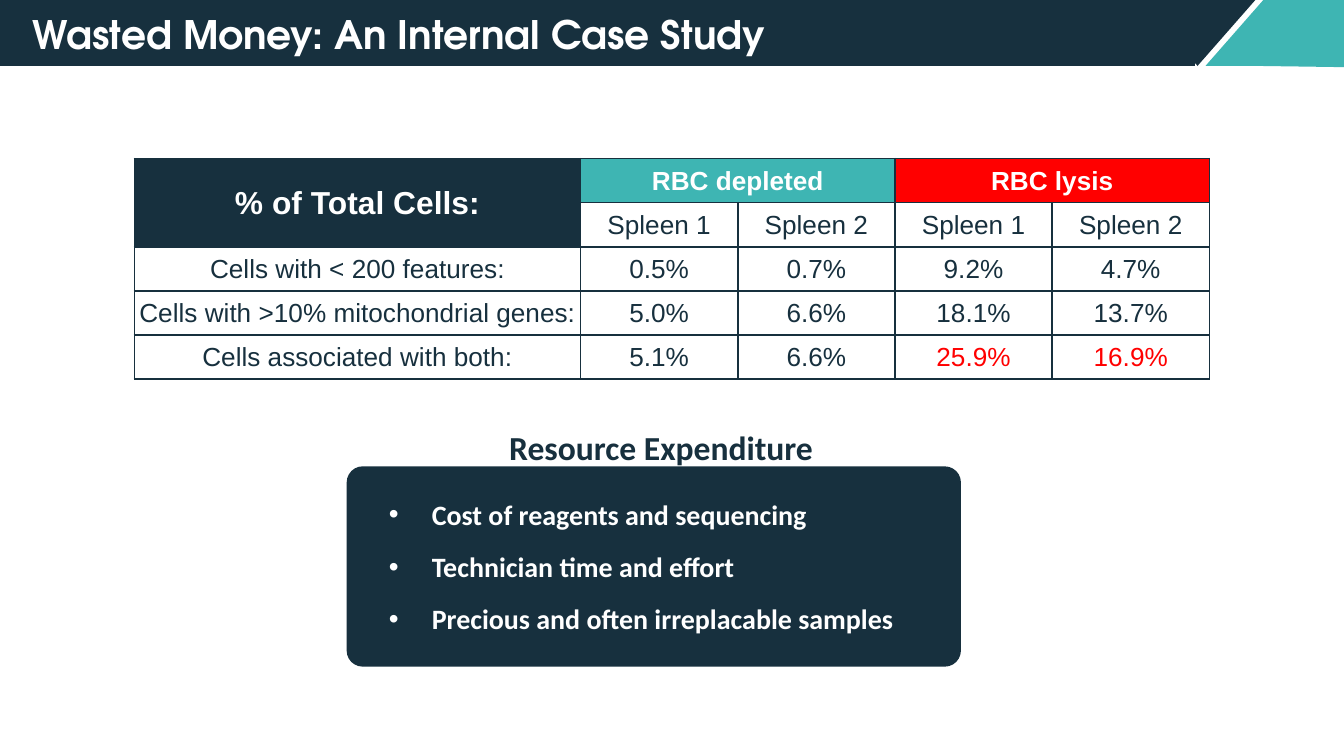
"""Build the slide on wasted money: a cell quality table above a resource list."""
import dataclasses
import typing

import lxml.etree
import pptx
import pptx.dml.color
import pptx.enum.shapes
import pptx.enum.text
import pptx.oxml.ns
import pptx.util

Inches = pptx.util.Inches
Preset = pptx.enum.shapes.MSO_SHAPE
Align = pptx.enum.text.PP_ALIGN
Anchor = pptx.enum.text.MSO_ANCHOR


@dataclasses.dataclass(frozen=True)
class Theme:
    navy: str = "17303E"
    teal: str = "3EB5B3"
    red: str = "FF0000"
    white: str = "FFFFFF"
    title_font: str = "TeX Gyre Adventor"
    table_font: str = "Arial"
    body_font: str = "Calibri"
    title_size: float = 21
    heading_size: float = 18
    corner_size: float = 17
    bullet_size: float = 15
    table_size: float = 14
    bullet_gap: float = 10
    border_width: float = 1


THEME = Theme()


class Box(typing.NamedTuple):
    left: float
    top: float
    width: float
    height: float

    def lengths(self) -> list:
        return [Inches(value) for value in self]


class Style(typing.NamedTuple):
    font: str
    size: float
    color: str
    bold: bool = True


class Banner(typing.NamedTuple):
    preset: typing.Any
    box: Box
    color: str
    rotation: float = 0


class Header(typing.NamedTuple):
    text: str
    first: tuple
    last: tuple
    color: str
    size: float


SLIDE_WIDTH = 10
SLIDE_HEIGHT = SLIDE_WIDTH * 9 / 16
BANNERS = (
    Banner(Preset.RECTANGLE, Box(0, 0, 8.89, 0.49), THEME.navy),
    Banner(Preset.ISOSCELES_TRIANGLE, Box(8.97, 0, 0.86, 0.49), THEME.teal),
    Banner(Preset.ISOSCELES_TRIANGLE, Box(8.48, 0, 0.86, 0.49), THEME.navy, 180),
)
CORNER = ((9.28, 0.49), (9.4, 0), (10, 0), (10, 0.5))
HEADERS = (
    Header("% of Total Cells:", (0, 0), (1, 0), THEME.navy, THEME.corner_size),
    Header("RBC depleted", (0, 1), (0, 2), THEME.teal, THEME.table_size),
    Header("RBC lysis", (0, 3), (0, 4), THEME.red, THEME.table_size),
)
ROWS = (
    ("", "Spleen 1", "Spleen 2", "Spleen 1", "Spleen 2"),
    ("Cells with < 200 features:", "0.5%", "0.7%", "9.2%", "4.7%"),
    ("Cells with >10% mitochondrial genes:", "5.0%", "6.6%", "18.1%", "13.7%"),
    ("Cells associated with both:", "5.1%", "6.6%", "25.9%", "16.9%"),
)
HIGHLIGHTS = ("25.9%", "16.9%")
COLUMN_WIDTHS = (3.32, 1.17, 1.17, 1.17, 1.17)
TABLE_HEIGHT = 1.64
EXPENSES = (
    "Cost of reagents and sequencing",
    "Technician time and effort",
    "Precious and often irreplacable samples",
)


def rgb(color: str) -> pptx.dml.color.RGBColor:
    return pptx.dml.color.RGBColor.from_string(color)


def paint(shape, color: str) -> None:
    shape.shadow.inherit = False
    shape.fill.solid()
    shape.fill.fore_color.rgb = rgb(color)
    shape.line.fill.background()


def add_run(paragraph, text: str, style: Style) -> None:
    run = paragraph.add_run()
    run.text = text
    run.font.name = style.font
    run.font.size = pptx.util.Pt(style.size)
    run.font.bold = style.bold
    run.font.color.rgb = rgb(style.color)


def set_margins(target, horizontal: float, top: float, bottom: float) -> None:
    target.margin_left = target.margin_right = Inches(horizontal)
    target.margin_top = Inches(top)
    target.margin_bottom = Inches(bottom)


def add_element(parent, tag: str, **attributes: str):
    return lxml.etree.SubElement(parent, pptx.oxml.ns.qn(tag), attributes)


def add_banner(slide) -> None:
    points = [(Inches(x), Inches(y)) for x, y in CORNER]
    builder = slide.shapes.build_freeform(*points[0])
    builder.add_line_segments(points[1:], close=True)
    paint(builder.convert_to_shape(), THEME.teal)
    for banner in BANNERS:
        shape = slide.shapes.add_shape(banner.preset, *banner.box.lengths())
        shape.rotation = banner.rotation
        paint(shape, banner.color)


def add_text(slide, box: Box, text: str, style: Style, margins: tuple, anchor) -> None:
    frame = slide.shapes.add_textbox(*box.lengths()).text_frame
    frame.word_wrap = True
    frame.vertical_anchor = anchor
    set_margins(frame, *margins)
    add_run(frame.paragraphs[0], text, style)


def add_borders(cell) -> None:
    properties = cell._tc.get_or_add_tcPr()
    for position, side in enumerate(("a:lnL", "a:lnR", "a:lnT", "a:lnB")):
        width = str(pptx.util.Pt(THEME.border_width))
        line = add_element(properties, side, w=width)
        add_element(add_element(line, "a:solidFill"), "a:srgbClr", val=THEME.navy)
        properties.insert(position, line)


def fill_cell(cell, text: str, fill: str, style: Style) -> None:
    cell.fill.solid()
    cell.fill.fore_color.rgb = rgb(fill)
    cell.vertical_anchor = Anchor.MIDDLE
    set_margins(cell, 0.01, 0.01, 0)
    paragraph = cell.text_frame.paragraphs[0]
    paragraph.alignment = Align.CENTER
    if text:
        add_run(paragraph, text, style)


def add_cell_table(slide) -> None:
    row_count = len(ROWS) + 1
    box = Box(1, 1.18, sum(COLUMN_WIDTHS), TABLE_HEIGHT)
    table = slide.shapes.add_table(row_count, len(COLUMN_WIDTHS), *box.lengths()).table
    table.first_row = table.horz_banding = False
    for column, width in zip(table.columns, COLUMN_WIDTHS):
        column.width = Inches(width)
    for row_index, values in enumerate(ROWS, start=1):
        for column_index, text in enumerate(values):
            color = THEME.red if text in HIGHLIGHTS else THEME.navy
            style = Style(THEME.table_font, THEME.table_size, color, False)
            fill_cell(table.cell(row_index, column_index), text, THEME.white, style)
    for header in HEADERS:
        cell = table.cell(*header.first)
        cell.merge(table.cell(*header.last))
        style = Style(THEME.table_font, header.size, THEME.white)
        fill_cell(cell, header.text, header.color, style)
    for cell in table.iter_cells():
        add_borders(cell)


def add_expense_list(slide) -> None:
    box = Box(2.58, 3.47, 4.57, 1.49)
    panel = slide.shapes.add_shape(Preset.ROUNDED_RECTANGLE, *box.lengths())
    panel.adjustments[0] = 0.08
    paint(panel, THEME.navy)
    frame = panel.text_frame
    frame.word_wrap = True
    frame.vertical_anchor = Anchor.MIDDLE
    set_margins(frame, 0.1, 0.1, 0.1)
    for index, text in enumerate(EXPENSES):
        paragraph = frame.add_paragraph() if index else frame.paragraphs[0]
        properties = paragraph._p.get_or_add_pPr()
        properties.set("marL", str(Inches(0.5)))
        properties.set("indent", str(Inches(-0.32)))
        add_element(add_element(properties, "a:buClr"), "a:srgbClr", val=THEME.white)
        add_element(properties, "a:buFont", typeface=THEME.table_font)
        add_element(properties, "a:buChar", char="•")
        paragraph.alignment = Align.LEFT
        if index:
            paragraph.space_before = pptx.util.Pt(THEME.bullet_gap)
        add_run(paragraph, text, Style(THEME.body_font, THEME.bullet_size, THEME.white))
    paragraph.space_after = pptx.util.Pt(THEME.bullet_gap)


def main() -> None:
    presentation = pptx.Presentation()
    presentation.slide_width = Inches(SLIDE_WIDTH)
    presentation.slide_height = Inches(SLIDE_HEIGHT)
    slide = presentation.slides.add_slide(presentation.slide_layouts[6])
    add_banner(slide)
    title_style = Style(THEME.title_font, THEME.title_size, THEME.white)
    add_text(slide, Box(0.17, 0, 9.66, 0.5), "Wasted Money: An Internal Case Study",
             title_style, (0.07, 0.04, 0.04), Anchor.MIDDLE)
    heading_style = Style(THEME.body_font, THEME.heading_size, THEME.navy)
    add_text(slide, Box(3.69, 3.08, 2.69, 0.5), "Resource Expenditure",
             heading_style, (0.1, 0.1, 0.1), Anchor.TOP)
    add_cell_table(slide)
    add_expense_list(slide)
    presentation.save("out.pptx")


if __name__ == "__main__":
    main()
